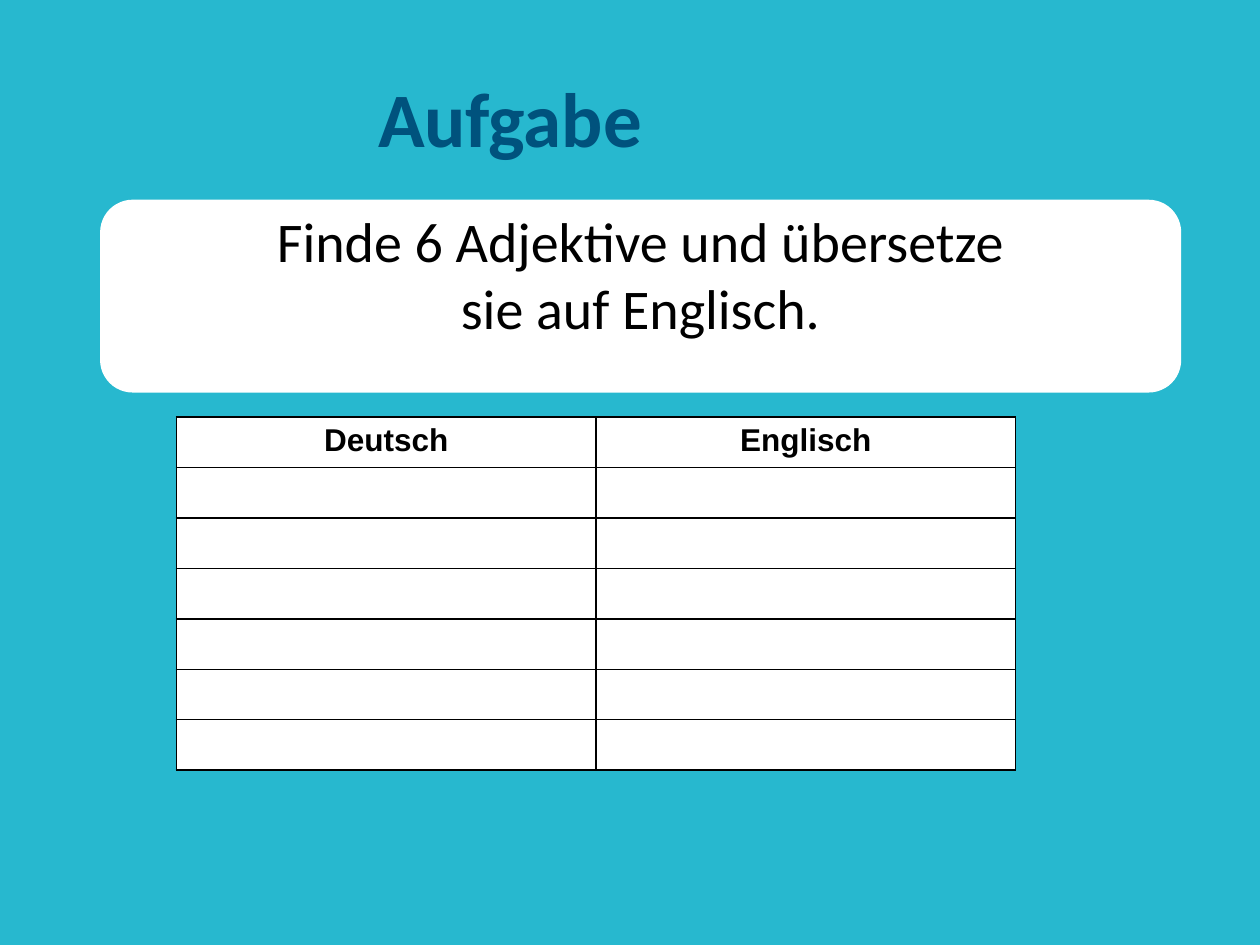
from itertools import product

from lxml.etree import SubElement
from pptx import Presentation
from pptx.dml.color import RGBColor
from pptx.enum.shapes import MSO_SHAPE
from pptx.enum.text import MSO_ANCHOR, PP_ALIGN
from pptx.oxml.ns import qn
from pptx.util import Inches, Pt

TITLE = "Aufgabe"
TASK = ["Finde 6 Adjektive und übersetze", "sie auf Englisch."]
HEADERS = ["Deutsch", "Englisch"]
ADJECTIVES = 6

COLORS = {"background": "27B8CF", "title": "00527D", "panel": "FFFFFF", "ink": "000000"}
SLIDE_WIDTH, SLIDE_HEIGHT = 10, 7.5
MARGIN = 0.5
PANEL_LEFT, PANEL_TOP, PANEL_WIDTH = 0.8, 1.59, 8.57
PANEL_HEIGHT, TASK_HEIGHT = 1.52, 4.95
TABLE_LEFT, TABLE_TOP = 1.4, 3.31
COLUMN_WIDTH, ROW_HEIGHT = 3.33, 0.39


def color(name):
    """Return the named palette colour."""
    return RGBColor.from_string(COLORS[name])


def write(frame, lines, font_name, size, ink="ink", bold=False):
    """Fill a text frame with centred, formatted paragraphs."""
    frame.text = "\n".join(lines)
    for paragraph in frame.paragraphs:
        paragraph.alignment = PP_ALIGN.CENTER
        for run in paragraph.runs:
            run.font.name, run.font.size, run.font.bold = font_name, Pt(size), bold
            run.font.color.rgb = color(ink)


def add_text(slide, box, lines, size, **style):
    """Add a wrapping text box and return its frame."""
    frame = slide.shapes.add_textbox(*map(Inches, box)).text_frame
    frame.word_wrap = True
    write(frame, lines, "Calibri", size, **style)
    return frame


def add_borders(cell):
    """Draw a thin line on all four sides of a cell."""
    properties = cell._tc.get_or_add_tcPr()
    for position, side in enumerate(("lnL", "lnR", "lnT", "lnB")):
        line = SubElement(properties, qn(f"a:{side}"), w=str(Pt(1)))
        fill = SubElement(line, qn("a:solidFill"))
        SubElement(fill, qn("a:srgbClr"), val=COLORS["ink"])
        properties.insert(position, line)


def add_panel(slide):
    """Add the rounded panel behind the task."""
    box = PANEL_LEFT, PANEL_TOP, PANEL_WIDTH, PANEL_HEIGHT
    panel = slide.shapes.add_shape(MSO_SHAPE.ROUNDED_RECTANGLE, *map(Inches, box))
    panel.shadow.inherit = False
    panel.fill.solid()
    panel.fill.fore_color.rgb = panel.line.color.rgb = color("panel")
    panel.line.width = Pt(0.75)


def add_vocabulary(slide):
    """Add the table with a header and one empty row per adjective."""
    rows, columns = ADJECTIVES + 1, len(HEADERS)
    box = TABLE_LEFT, TABLE_TOP, columns * COLUMN_WIDTH, rows * ROW_HEIGHT
    vocabulary = slide.shapes.add_table(rows, columns, *map(Inches, box)).table
    for row, column in product(range(rows), range(columns)):
        cell = vocabulary.cell(row, column)
        cell.fill.solid()
        cell.fill.fore_color.rgb = color("panel")
        add_borders(cell)
        if row == 0:
            write(cell.text_frame, [HEADERS[column]], "Arial", 18, bold=True)


def main():
    """Build the worksheet slide."""
    presentation = Presentation()
    presentation.slide_width, presentation.slide_height = Inches(SLIDE_WIDTH), Inches(SLIDE_HEIGHT)
    slide = presentation.slides.add_slide(presentation.slide_layouts[6])
    slide.background.fill.solid()
    slide.background.fill.fore_color.rgb = color("background")

    add_panel(slide)
    title_box = MARGIN, 0.3, SLIDE_WIDTH - 2 * MARGIN, 1.25
    title = add_text(slide, title_box, [TITLE], 44, ink="title", bold=True)
    title.vertical_anchor = MSO_ANCHOR.MIDDLE
    title.margin_right = Inches(2)
    add_text(slide, (PANEL_LEFT, PANEL_TOP, PANEL_WIDTH, TASK_HEIGHT), TASK, 32)
    add_vocabulary(slide)
    presentation.save("out.pptx")


if __name__ == "__main__":
    main()
